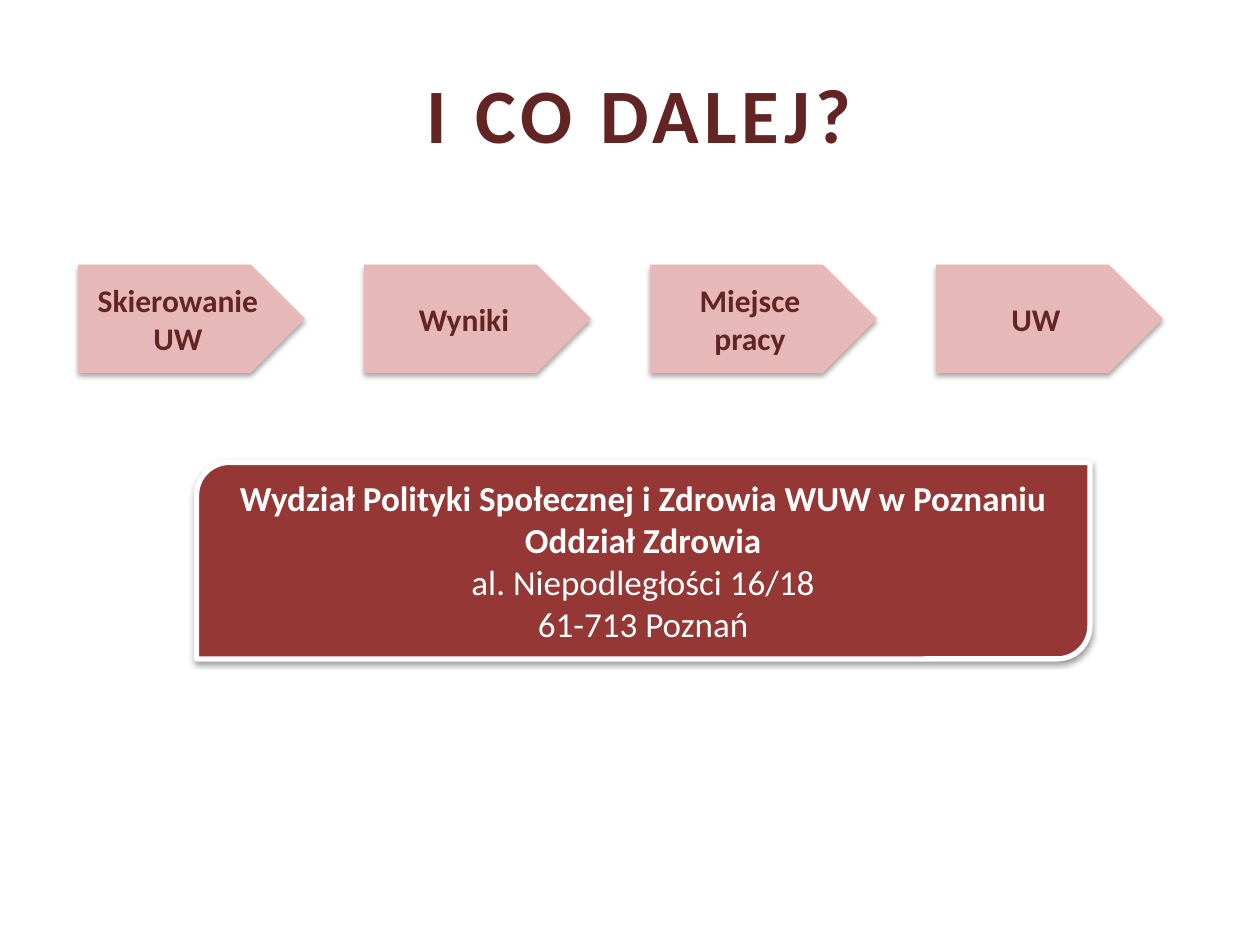
from lxml import etree
from pptx import Presentation
from pptx.dml.color import RGBColor
from pptx.enum.shapes import MSO_SHAPE
from pptx.enum.text import MSO_ANCHOR, PP_ALIGN
from pptx.oxml.ns import qn
from pptx.util import Inches, Pt

PENTAGON = MSO_SHAPE.PENTAGON
DIAGONAL_ROUND = MSO_SHAPE.ROUND_2_DIAG_RECTANGLE
MIDDLE = MSO_ANCHOR.MIDDLE
CENTER = PP_ALIGN.CENTER

COLORS = {
    "maroon": "632523",
    "pink": "E6B9B8",
    "brick": "953735",
    "white": "FFFFFF",
    "black": "000000",
}


def rgb(name):
    return RGBColor.from_string(COLORS[name])


def write(paragraph, text, *, size, color, bold=True, font="Calibri", spacing=None):
    paragraph.alignment = CENTER
    run = paragraph.add_run()
    run.text = text
    run.font.name = font
    run.font.size = Pt(size)
    run.font.bold = bold
    run.font.color.rgb = rgb(color)
    if spacing:
        run.font._element.set("spc", str(spacing * 100))


class SlideBuilder:
    """Draws the slide's title, process steps and address card in one style."""

    def __init__(self, slide):
        self.slide = slide

    def frame(self, shape):
        frame = shape.text_frame
        frame.word_wrap = True
        frame.vertical_anchor = MIDDLE
        return frame

    def title(self, text, left, top, width, height):
        box = self.slide.shapes.add_textbox(
            Inches(left), Inches(top), Inches(width), Inches(height))
        write(self.frame(box).paragraphs[0], text, size=44, color="maroon", spacing=3)

    def panel(self, kind, left, top, width, height, fill, opacity, distance):
        panel = self.slide.shapes.add_shape(
            kind, Inches(left), Inches(top), Inches(width), Inches(height))
        panel.fill.solid()
        panel.fill.fore_color.rgb = rgb(fill)
        panel.line.fill.background()
        self.shadow(panel, opacity, distance)
        return panel

    def shadow(self, shape, opacity, distance):
        shape.shadow.inherit = False
        effects = shape._element.spPr.find(qn("a:effectLst"))
        outer = etree.SubElement(
            effects, qn("a:outerShdw"), blurRad=str(Pt(3.1)), dist=str(Pt(distance)),
            dir="5400000", rotWithShape="0")
        color = etree.SubElement(outer, qn("a:srgbClr"), val=COLORS["black"])
        etree.SubElement(color, qn("a:alpha"), val=str(opacity * 1000))

    def step(self, text, left, top):
        step = self.panel(PENTAGON, left, top, 1.8, 0.86, "pink", 35, 1.8)
        write(self.frame(step).paragraphs[0], text, size=18, color="maroon")

    def card(self, lines, left, top, width, height):
        card = self.panel(DIAGONAL_ROUND, left, top, width, height, "brick", 38, 1.6)
        card.line.color.rgb = rgb("white")
        card.line.width = Pt(3)
        frame = self.frame(card)
        for index, (text, bold) in enumerate(lines):
            paragraph = frame.add_paragraph() if index else frame.paragraphs[0]
            write(paragraph, text, size=20, color="white", bold=bold)


def main():
    presentation = Presentation()
    presentation.slide_width = Inches(10)
    presentation.slide_height = Inches(7.5)
    builder = SlideBuilder(presentation.slides.add_slide(presentation.slide_layouts[6]))

    builder.title("I CO DALEJ?", 0.86, 0.38, 8.43, 1.03)
    steps = ["Skierowanie UW", "Wyniki", "Miejsce pracy", "UW"]
    for index, step in enumerate(steps):
        builder.step(step, 0.62 + index * 2.27, 2.1)
    address = [
        ("Wydział Polityki Społecznej i Zdrowia WUW w Poznaniu", True),
        ("Oddział Zdrowia", True),
        ("al. Niepodległości 16/18", False),
        ("61-713 Poznań", False),
    ]
    builder.card(address, 1.56, 3.67, 7.09, 1.56)

    presentation.save("out.pptx")


if __name__ == "__main__":
    main()
